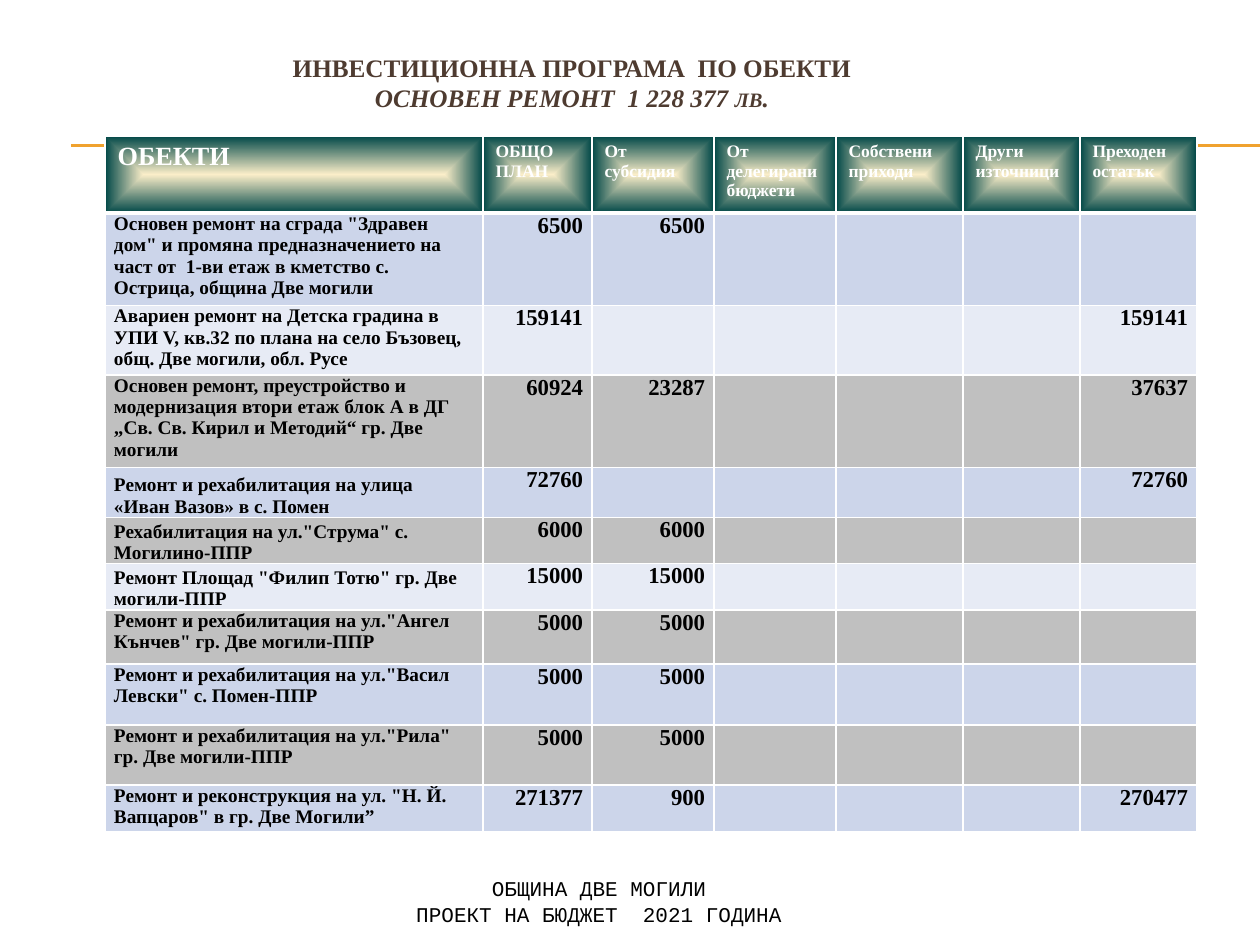
from dataclasses import dataclass

from lxml import etree
from pptx import Presentation
from pptx.dml.color import RGBColor
from pptx.enum.shapes import MSO_CONNECTOR
from pptx.enum.text import MSO_ANCHOR, PP_ALIGN
from pptx.oxml import parse_xml
from pptx.oxml.ns import qn
from pptx.util import Emu, Pt

LEFT, CENTER, RIGHT = PP_ALIGN.LEFT, PP_ALIGN.CENTER, PP_ALIGN.RIGHT
TOP, BOTTOM = MSO_ANCHOR.TOP, MSO_ANCHOR.BOTTOM
STRAIGHT = MSO_CONNECTOR.STRAIGHT

PX_PER_INCH = 126
SERIF, MONO = "Times New Roman", "Courier New"
COLORS = {
    "rule": "F0A22E", "title": "4E3B30", "text": "000000", "white": "FFFFFF",
    "glow": "FBEEC9", "teal": "004747",
    "blue": "CCD5EA", "pale": "E7EBF5", "grey": "C0C0C0",
}
NS = 'xmlns:a="http://schemas.openxmlformats.org/drawingml/2006/main"'


@dataclass
class Project:
    name: str
    height: int
    fill: str
    total: str
    subsidy: str = ""
    carryover: str = ""
    anchor: MSO_ANCHOR = TOP

    def values(self) -> list[str]:
        return [self.total, self.subsidy, "", "", "", self.carryover]


HEADER_HEIGHT = 77
COLUMN_WIDTHS = [378, 109, 122, 122, 127, 117, 117]
HEADINGS = ["ОБЕКТИ", "ОБЩО ПЛАН", "От субсидия", "От делегирани бюджети",
            "Собствени приходи", "Други източници", "Преходен остатък"]
PROJECTS = [
    Project('Основен ремонт на сграда "Здравен дом" и промяна предназначението на '
            'част от  1-ви етаж в кметство с. Острица, община Две могили',
            91, "blue", "6500", "6500"),
    Project("Авариен ремонт на Детска градина в УПИ V, кв.32 по плана на село Бъзовец, "
            "общ. Две могили, обл. Русе", 68, "pale", "159141", carryover="159141"),
    Project("Основен ремонт, преустройство и модернизация втори етаж блок А в ДГ "
            "„Св. Св. Кирил и Методий“ гр. Две могили",
            90, "grey", "60924", "23287", "37637"),
    Project("Ремонт и рехабилитация на улица «Иван Вазов» в с. Помен",
            50, "blue", "72760", carryover="72760", anchor=BOTTOM),
    Project('Рехабилитация на ул."Струма" с. Могилино-ППР',
            45, "grey", "6000", "6000", anchor=BOTTOM),
    Project('Ремонт Площад "Филип Тотю" гр. Две могили-ППР',
            45, "pale", "15000", "15000", anchor=BOTTOM),
    Project('Ремонт и рехабилитация на ул."Ангел Кънчев" гр. Две могили-ППР',
            54, "grey", "5000", "5000"),
    Project('Ремонт и рехабилитация на ул."Васил Левски" с. Помен-ППР',
            61, "blue", "5000", "5000"),
    Project('Ремонт и рехабилитация на ул."Рила" гр. Две могили-ППР',
            60, "grey", "5000", "5000"),
    Project('Ремонт и реконструкция на ул. "Н. Й. Вапцаров" в гр. Две Могили”',
            47, "blue", "271377", "900", "270477"),
]


def px(length: int) -> Emu:
    return Emu(round(length * 914400 / PX_PER_INCH))


def color(name: str) -> RGBColor:
    return RGBColor.from_string(COLORS[name])


def style(paragraph, size: float, ink: str, face: str = SERIF,
          bold: bool = True, align: PP_ALIGN = LEFT) -> None:
    paragraph.alignment = align
    font = paragraph.font
    font.size, font.name, font.bold = Pt(size), face, bold
    font.color.rgb = color(ink)


def set_margins(box, left: int, top: int, right: int, bottom: int) -> None:
    box.margin_left, box.margin_top = px(left), px(top)
    box.margin_right, box.margin_bottom = px(right), px(bottom)


def add_rule(slide, y: int) -> None:
    rule = slide.shapes.add_connector(STRAIGHT, px(71), px(y), px(1260), px(y))
    rule.line.color.rgb = color("rule")
    rule.line.width = Pt(0.75)
    etree.SubElement(rule._element.spPr, qn("a:effectLst"))


def add_text_frame(slide, x: int, y: int, width: int, height: int):
    frame = slide.shapes.add_textbox(px(x), px(y), px(width), px(height)).text_frame
    frame.word_wrap = True
    set_margins(frame, 0, 0, 0, 0)
    return frame


def set_borders(cell, top: int = 1, bottom: int = 1) -> None:
    widths = {"lnL": 1, "lnR": 1, "lnT": top, "lnB": bottom}
    for side, points in widths.items():
        cell._tc.get_or_add_tcPr().append(parse_xml(
            f'<a:{side} {NS} w="{Pt(points)}"><a:solidFill>'
            f'<a:srgbClr val="{COLORS["white"]}"/></a:solidFill></a:{side}>'))


def set_glow(cell) -> None:
    cell._tc.get_or_add_tcPr().append(parse_xml(
        f'<a:gradFill {NS} rotWithShape="0"><a:gsLst>'
        f'<a:gs pos="0"><a:srgbClr val="{COLORS["glow"]}"/></a:gs>'
        f'<a:gs pos="100000"><a:srgbClr val="{COLORS["teal"]}"/></a:gs></a:gsLst>'
        '<a:path path="shape"><a:fillToRect l="50000" t="50000" r="50000" b="50000"/>'
        '</a:path></a:gradFill>'))


def fill_header(cell, heading: str, size: int) -> None:
    cell.text = heading
    style(cell.text_frame.paragraphs[0], size, "white")
    set_borders(cell, bottom=3)
    set_glow(cell)


def fill_body(cell, text: str, size: int, align: PP_ALIGN, fill: str, top: int) -> None:
    cell.text = text
    set_margins(cell, 9, 0, 9, 0)
    style(cell.text_frame.paragraphs[0], size, "text", align=align)
    set_borders(cell, top=top)
    cell.fill.solid()
    cell.fill.fore_color.rgb = color(fill)


def add_projects_table(slide) -> None:
    heights = [HEADER_HEIGHT] + [project.height for project in PROJECTS]
    table = slide.shapes.add_table(
        len(heights), len(COLUMN_WIDTHS), px(105), px(136),
        px(sum(COLUMN_WIDTHS)), px(sum(heights))).table
    for column, width in zip(table.columns, COLUMN_WIDTHS):
        column.width = px(width)
    for row, height in zip(table.rows, heights):
        row.height = px(height)

    for col, heading in enumerate(HEADINGS):
        fill_header(table.cell(0, col), heading, 10 if col else 15)
    for row, project in enumerate(PROJECTS, start=1):
        top = 3 if row == 1 else 1
        name_cell = table.cell(row, 0)
        fill_body(name_cell, project.name, 11, LEFT, project.fill, top)
        name_cell.vertical_anchor = project.anchor
        for col, value in enumerate(project.values(), start=1):
            fill_body(table.cell(row, col), value, 13, RIGHT, project.fill, top)


def main() -> None:
    prs = Presentation()
    prs.slide_width, prs.slide_height = px(1260), px(945)
    slide = prs.slides.add_slide(prs.slide_layouts[6])

    # Double rule behind the table
    for y in (145, 146):
        add_rule(slide, y)

    # Footer
    footer = add_text_frame(slide, 368, 876, 462, 50)
    footer.text = "ОБЩИНА ДВЕ МОГИЛИ\nПРОЕКТ НА БЮДЖЕТ  2021 ГОДИНА"
    for line in footer.paragraphs:
        style(line, 12, "text", MONO, bold=False, align=CENTER)

    # Title
    title = add_text_frame(slide, 0, 21, 1144, 53)
    title.margin_top = px(31)
    heading = title.paragraphs[0]
    style(heading, 14.4, "title", align=CENTER)
    heading.add_run().text = "ИНВЕСТИЦИОННА ПРОГРАМА  ПО ОБЕКТИ"
    heading.add_line_break()
    for part, size in (("ОСНОВЕН РЕМОНТ  1 228 377 ", 14.4), ("ЛВ", 11.7), (".", 14.4)):
        run = heading.add_run()
        run.text = part
        run.font.italic = True
        run.font.size = Pt(size)

    # Projects
    add_projects_table(slide)
    prs.save("out.pptx")


if __name__ == "__main__":
    main()
